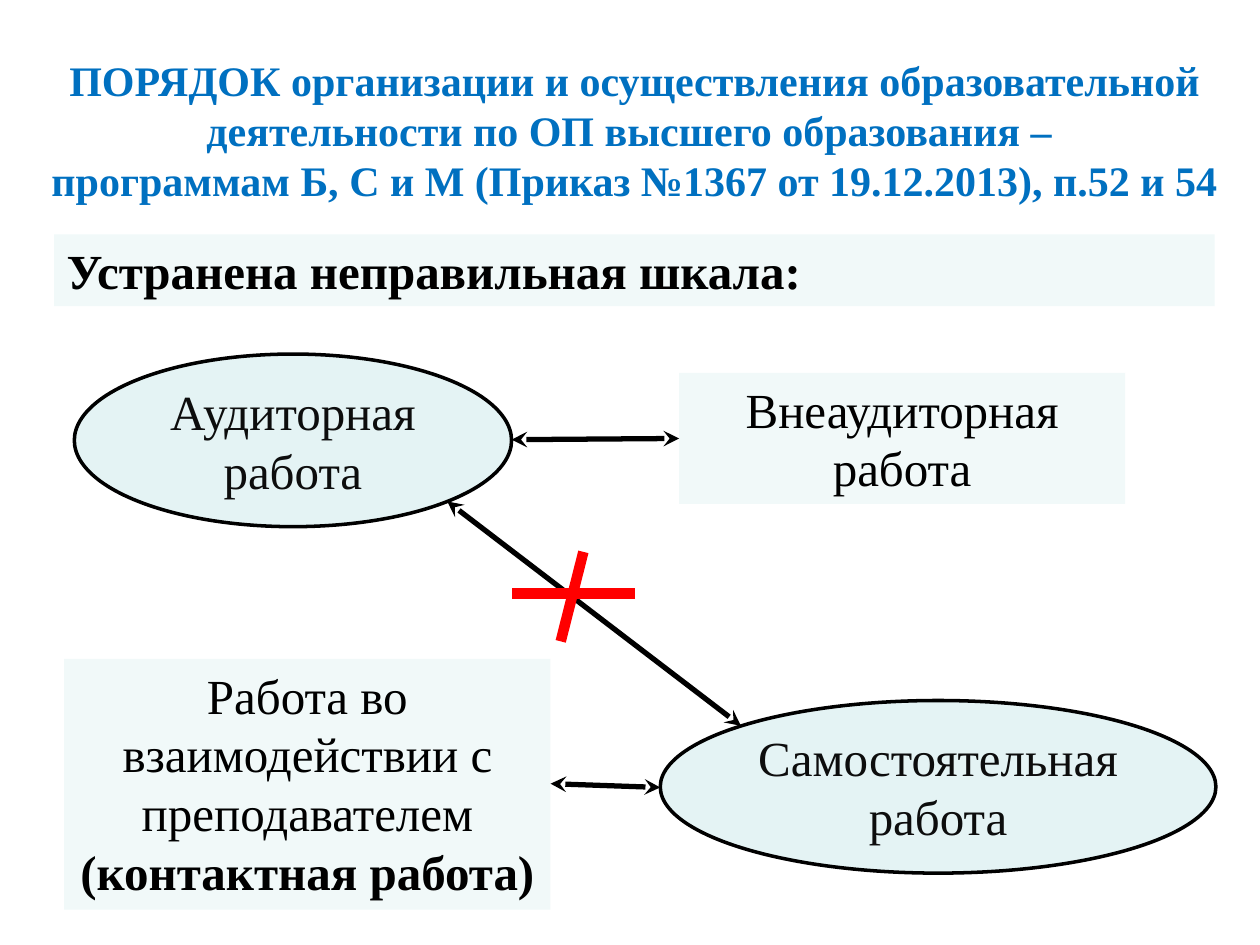
"""Build a slide on the kinds of study work and the link struck out between two of them."""
from typing import NamedTuple

from lxml import etree
from pptx import Presentation
from pptx.dml.color import RGBColor
from pptx.enum.shapes import MSO_CONNECTOR, MSO_SHAPE
from pptx.enum.text import MSO_ANCHOR, MSO_AUTO_SIZE, PP_ALIGN
from pptx.oxml.ns import qn
from pptx.util import Inches, Pt

RECTANGLE, ELLIPSE = MSO_SHAPE.RECTANGLE, MSO_SHAPE.OVAL
STRAIGHT = MSO_CONNECTOR.STRAIGHT
LEFT, CENTER = PP_ALIGN.LEFT, PP_ALIGN.CENTER
TOP, MIDDLE = MSO_ANCHOR.TOP, MSO_ANCHOR.MIDDLE
GROW = MSO_AUTO_SIZE.SHAPE_TO_FIT_TEXT

BLUE = RGBColor(0x00, 0x70, 0xC0)
BLACK = RGBColor(0x00, 0x00, 0x00)
NEAR_BLACK = RGBColor(0x0D, 0x0D, 0x0D)
RED = RGBColor(0xFF, 0x00, 0x00)
PALE = RGBColor(0xF1, 0xF9, 0xF9)
MINT = RGBColor(0xE4, 0xF3, 0xF4)

FONT = "Times New Roman"
WIDTH, HEIGHT = Inches(10), Inches(7.5)


class Area(NamedTuple):
    """A rectangle in percent of the slide's width and height."""
    left: float
    top: float
    width: float
    height: float


class Panel(NamedTuple):
    """A plain box that fits its text."""
    area: Area
    lines: tuple
    align: int = CENTER
    bold: bool = False
    bold_ending: str = ""


class Bubble(NamedTuple):
    """An outlined ellipse with a label."""
    area: Area
    label: str


class Link(NamedTuple):
    """A straight line between two points in percent of the slide."""
    start: tuple
    end: tuple
    color: RGBColor = BLACK
    weight: int = 3
    arrows: bool = True


TITLE_AREA = Area(2.7, 3.73, 95.3, 20)
TITLE_LINES = (
    "ПОРЯДОК организации и осуществления образовательной деятельности по ОП высшего образования – ",
    "программам Б, С и М (Приказ №1367 от 19.12.2013), п.52 и 54",
)
PANELS = (
    Panel(Area(4.3, 24.8, 92.1, 7.6), ("Устранена неправильная шкала:",), LEFT, True),
    Panel(Area(53.9, 39.47, 35.4, 13.87), ("Внеаудиторная", "работа")),
    Panel(Area(5.1, 69.73, 38.6, 26.53), ("Работа во взаимодействии с преподавателем ",),
          bold_ending="(контактная работа)"),
)
BUBBLES = (
    Bubble(Area(5.9, 37.47, 34.7, 18.27), "Аудиторная работа"),
    Bubble(Area(52.4, 74.13, 44.1, 18.27), "Самостоятельная работа"),
)
LINKS = (
    Link((40.6, 46.53), (53.9, 46.4)),
    Link((52.4, 83.33), (43.7, 82.93)),
    Link((35.5, 53.07), (58.8, 76.8)),
    Link((46.3, 58.4), (44.5, 67.87), RED, 6, False),
    Link((50.4, 62.8), (40.6, 62.8), RED, 6, False),
)


def across(share: float) -> int:
    """Turn a percentage of the slide's width into a length."""
    return round(WIDTH * share / 100)


def down(share: float) -> int:
    """Turn a percentage of the slide's height into a length."""
    return round(HEIGHT * share / 100)


def place(area: Area) -> tuple:
    """Turn an area into left, top, width and height."""
    return across(area.left), down(area.top), across(area.width), down(area.height)


def style(para, size: int, color: RGBColor, align: int = CENTER, bold: bool = False) -> None:
    """Format a whole paragraph."""
    para.alignment = align
    para.font.name = FONT
    para.font.size = Pt(size)
    para.font.bold = bold
    para.font.color.rgb = color


def add_title(page) -> None:
    """Fill and move the title placeholder."""
    title = page.shapes.title
    title.left, title.top, title.width, title.height = place(TITLE_AREA)
    frame = title.text_frame
    frame.auto_size = MSO_AUTO_SIZE.NONE
    frame.vertical_anchor = MIDDLE
    para = frame.paragraphs[0]
    style(para, 24, BLUE, bold=True)
    first, last = TITLE_LINES
    para.add_run().text = first
    para.add_line_break()
    para.add_run().text = last


def add_box(page, kind: int, area: Area, fill: RGBColor, anchor: int):
    """Add a filled shape without shadow and outline."""
    box = page.shapes.add_shape(kind, *place(area))
    box.shadow.inherit = False
    box.fill.solid()
    box.fill.fore_color.rgb = fill
    box.line.fill.background()
    box.text_frame.word_wrap = True
    box.text_frame.vertical_anchor = anchor
    return box


def add_panel(page, panel: Panel) -> None:
    """Draw a panel with one paragraph for each line."""
    frame = add_box(page, RECTANGLE, panel.area, PALE, TOP).text_frame
    frame.auto_size = GROW
    frame.text = "\n".join(panel.lines)
    for para in frame.paragraphs:
        style(para, 28, BLACK, panel.align, panel.bold)
    if panel.bold_ending:
        span = frame.paragraphs[-1].add_run()
        span.text = panel.bold_ending
        span.font.bold = True


def add_bubble(page, bubble: Bubble) -> None:
    """Draw an outlined ellipse with its label."""
    box = add_box(page, ELLIPSE, bubble.area, MINT, MIDDLE)
    box.line.color.rgb = BLACK
    box.line.width = Pt(2)
    box.text_frame.text = bubble.label
    style(box.text_frame.paragraphs[0], 28, NEAR_BLACK)


def add_link(page, link: Link) -> None:
    """Draw a line, with arrowheads at both ends if asked for."""
    (x1, y1), (x2, y2) = link.start, link.end
    connector = page.shapes.add_connector(STRAIGHT, across(x1), down(y1), across(x2), down(y2))
    connector.line.color.rgb = link.color
    connector.line.width = Pt(link.weight)
    properties = connector._element.spPr
    if link.arrows:
        for end in ("a:headEnd", "a:tailEnd"):
            etree.SubElement(properties.find(qn("a:ln")), qn(end), type="stealth")
    etree.SubElement(properties, qn("a:effectLst"))


def main() -> None:
    """Build and save the deck."""
    deck = Presentation()
    deck.slide_width, deck.slide_height = WIDTH, HEIGHT
    page = deck.slides.add_slide(deck.slide_layouts.get_by_name("Title Only"))
    add_title(page)
    for panel in PANELS:
        add_panel(page, panel)
    for bubble in BUBBLES:
        add_bubble(page, bubble)
    for link in LINKS:
        add_link(page, link)
    deck.save("out.pptx")


if __name__ == "__main__":
    main()
